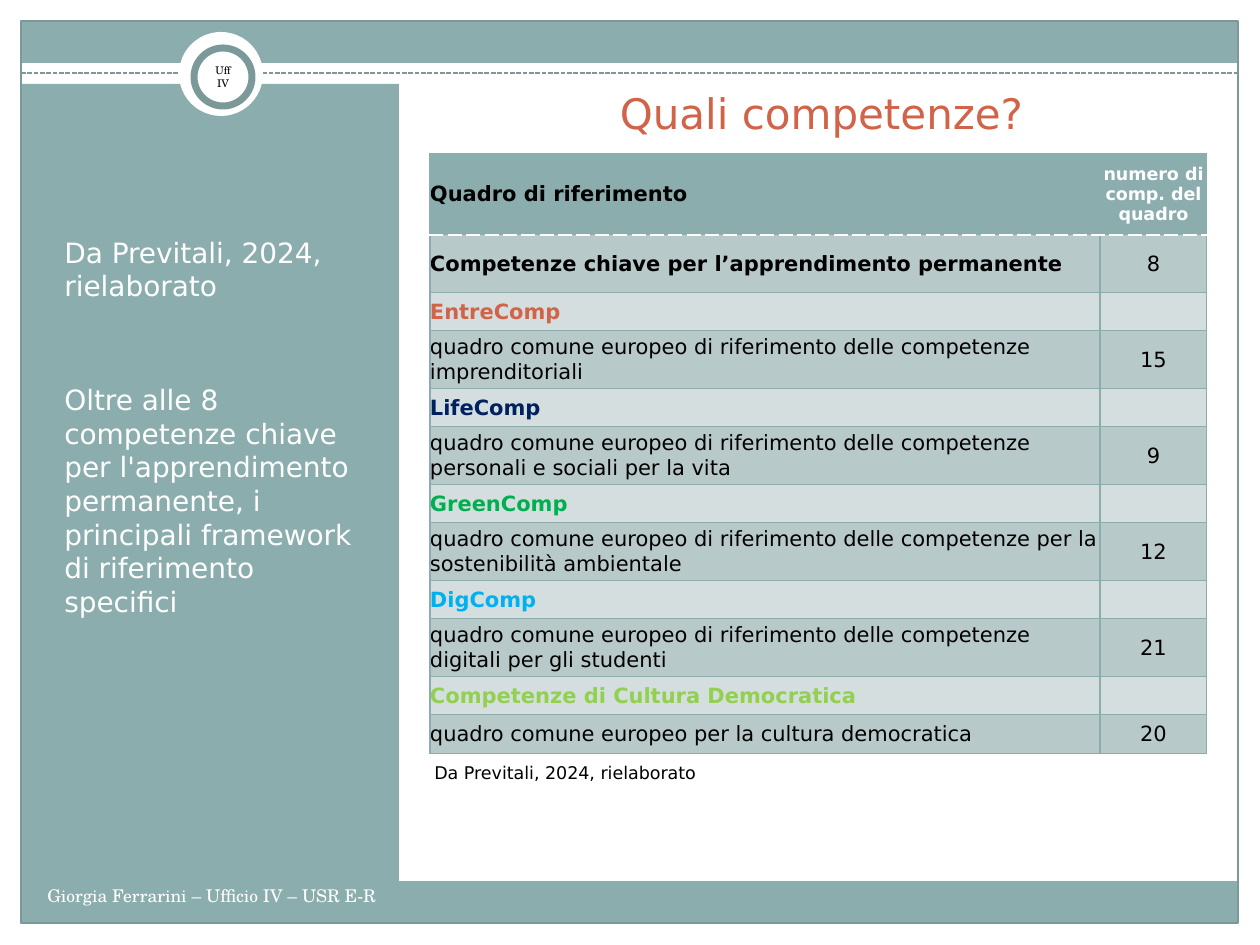
"""Build the slide on European competence frameworks."""
import pptx
import pptx.dml.color
import pptx.enum.dml
import pptx.enum.shapes
import pptx.enum.text
import pptx.oxml
import pptx.oxml.ns
import pptx.util

SHAPE = pptx.enum.shapes.MSO_SHAPE
ALIGN = pptx.enum.text.PP_ALIGN
ANCHOR = pptx.enum.text.MSO_ANCHOR

THEME = {
    "sans": "DejaVu Sans", "serif": "TeX Gyre Schola",
    "accent": "8CADAE", "edge": "7C999A", "dark": "B8C9CA", "light": "D5DEDE",
    "white": "FFFFFF", "black": "000000", "title": "D16349",
    "title_size": 24, "side_size": 16, "table_size": 12, "small_size": 10, "badge_size": 6,
}

TITLE = "Quali competenze?"
SIDE = [
    ("Da Previtali, 2024, rielaborato", 0),
    ("Oltre alle 8 competenze chiave per l'apprendimento permanente, "
     "i principali framework di riferimento specifici", 46),
]
HEADER = ("Quadro di riferimento", "numero di comp. del quadro")
KEY_ROW = ("Competenze chiave per l’apprendimento permanente", "8")
FRAMEWORKS = [
    ("EntreComp", "D16349",
     "quadro comune europeo di riferimento delle competenze imprenditoriali", "15", 58),
    ("LifeComp", "002060",
     "quadro comune europeo di riferimento delle competenze personali e sociali per la vita", "9", 58),
    ("GreenComp", "00B050",
     "quadro comune europeo di riferimento delle competenze per la sostenibilità ambientale", "12", 58),
    ("DigComp", "00B0F0",
     "quadro comune europeo di riferimento delle competenze digitali per gli studenti", "21", 58),
    ("Competenze di Cultura Democratica", "92D050",
     "quadro comune europeo per la cultura democratica", "20", 39),
]
COLUMNS = (670, 107)
BANDS = [(21, 21, 1217, 42), (21, 84, 378, 809), (21, 881, 1217, 43)]


def px(n):
    return round(n * 914400 / 126)


def box(*lengths):
    return [px(n) for n in lengths]


def rgb(name):
    return pptx.dml.color.RGBColor.from_string(THEME.get(name, name))


def add_run(p, text, size, color, font="sans", bold=False):
    r = p.add_run()
    r.text = text
    r.font.size = pptx.util.Pt(THEME[size])
    r.font.name = THEME[font]
    r.font.bold = bold
    r.font.color.rgb = rgb(color)


def add_shape(s, kind, place, fill=None, line=None, width=0.75):
    sp = s.shapes.add_shape(kind, *box(*place))
    sp.shadow.inherit = False
    if fill:
        sp.fill.solid()
        sp.fill.fore_color.rgb = rgb(fill)
    else:
        sp.fill.background()
    if line:
        sp.line.color.rgb = rgb(line)
        sp.line.width = pptx.util.Pt(width)
    else:
        sp.line.fill.background()
    return sp


def add_text(s, place, paragraphs, size, color, font="sans"):
    tf = s.shapes.add_textbox(*box(*place)).text_frame
    tf.word_wrap = True
    for i, (text, before) in enumerate(paragraphs):
        p = tf.add_paragraph() if i else tf.paragraphs[0]
        p.space_before = pptx.util.Pt(before)
        add_run(p, text, size, color, font)


def add_border(cell, side, color, width=0.75, dash="solid"):
    cell._tc.get_or_add_tcPr().append(pptx.oxml.parse_xml(
        f'<a:ln{side} {pptx.oxml.ns.nsdecls("a")} w="{pptx.util.Pt(width)}">'
        f'<a:solidFill><a:srgbClr val="{THEME[color]}"/></a:solidFill>'
        f'<a:prstDash val="{dash}"/></a:ln{side}>'))


def add_backdrop(s):
    for place in BANDS:
        add_shape(s, SHAPE.RECTANGLE, place, "accent")
    add_shape(s, SHAPE.RECTANGLE, (21, 21, 1217, 902), line="edge")
    rule = s.shapes.add_connector(pptx.enum.shapes.MSO_CONNECTOR.STRAIGHT, *box(21, 73, 1238, 73))
    rule.line.color.rgb = rgb("edge")
    rule.line.width = pptx.util.Pt(0.9)
    rule.line.dash_style = pptx.enum.dml.MSO_LINE.SQUARE_DOT
    rule._element.spPr.append(pptx.oxml.parse_xml(f'<a:effectLst {pptx.oxml.ns.nsdecls("a")}/>'))
    add_shape(s, SHAPE.OVAL, (179, 32, 84, 84), "white")
    badge = add_shape(s, SHAPE.OVAL, (194, 48, 58, 58), "white", "edge", 4)
    tf = badge.text_frame
    tf.word_wrap = True
    tf.vertical_anchor = ANCHOR.MIDDLE
    tf.margin_left = tf.margin_right = px(10)
    tf.margin_top = tf.margin_bottom = 0
    tf.paragraphs[0].alignment = ALIGN.CENTER
    add_run(tf.paragraphs[0], "Uff IV", "badge_size", "black", "serif")


def table_rows():
    head = (HEADER[0], "table_size", "black", True), (HEADER[1], "small_size", "white", True)
    key = (KEY_ROW[0], "table_size", "black", True), (KEY_ROW[1], "table_size", "black", False)
    rows = [(81, "accent", head), (58, "dark", key)]
    for name, color, detail, count, height in FRAMEWORKS:
        rows.append((38, "light", ((name, "table_size", color, True),
                                   ("", "table_size", "black", False))))
        rows.append((height, "dark", ((detail, "table_size", "black", False),
                                      (count, "table_size", "black", False))))
    return rows


def add_frameworks(s):
    rows = table_rows()
    place = box(430, 154, sum(COLUMNS), sum(row[0] for row in rows))
    table = s.shapes.add_table(len(rows), len(COLUMNS), *place).table
    table.first_row = table.horz_banding = False
    for column, width in zip(table.columns, COLUMNS):
        column.width = px(width)
    for i, (height, fill, cells) in enumerate(rows):
        table.rows[i].height = px(height)
        for j, (text, size, color, bold) in enumerate(cells):
            cell = table.cell(i, j)
            cell.margin_left = cell.margin_right = cell.margin_top = cell.margin_bottom = 0
            cell.vertical_anchor = ANCHOR.MIDDLE
            for side in "LRTB":
                if (i, side) in ((0, "B"), (1, "T")):
                    add_border(cell, side, "white", 0.9, "sysDash")
                else:
                    add_border(cell, side, "accent")
            cell.fill.solid()
            cell.fill.fore_color.rgb = rgb(fill)
            p = cell.text_frame.paragraphs[0]
            p.alignment = ALIGN.CENTER if j else ALIGN.LEFT
            add_run(p, text, size, color, bold=bold)


def add_title(s):
    title = s.shapes.title
    title.left, title.top, title.width, title.height = box(432, 40, 779, 105)
    tf = title.text_frame
    tf.auto_size = pptx.enum.text.MSO_AUTO_SIZE.NONE
    tf.vertical_anchor = ANCHOR.BOTTOM
    p = tf.paragraphs[0]
    p.alignment = ALIGN.CENTER
    p.line_spacing = 0.9
    add_run(p, TITLE, "title_size", "title")


def main():
    prs = pptx.Presentation()
    prs.slide_width, prs.slide_height = box(1260, 945)
    s = prs.slides.add_slide(prs.slide_layouts[5])
    add_backdrop(s)
    add_text(s, (52, 229, 325, 679), SIDE, "side_size", "white")
    add_title(s)
    add_frameworks(s)
    add_text(s, (35, 879, 430, 50), [("Giorgia Ferrarini – Ufficio IV – USR E-R", 0)],
             "small_size", "white", "serif")
    add_text(s, (422, 756, 378, 34), SIDE[:1], "small_size", "black")
    prs.save("out.pptx")


if __name__ == "__main__":
    main()
